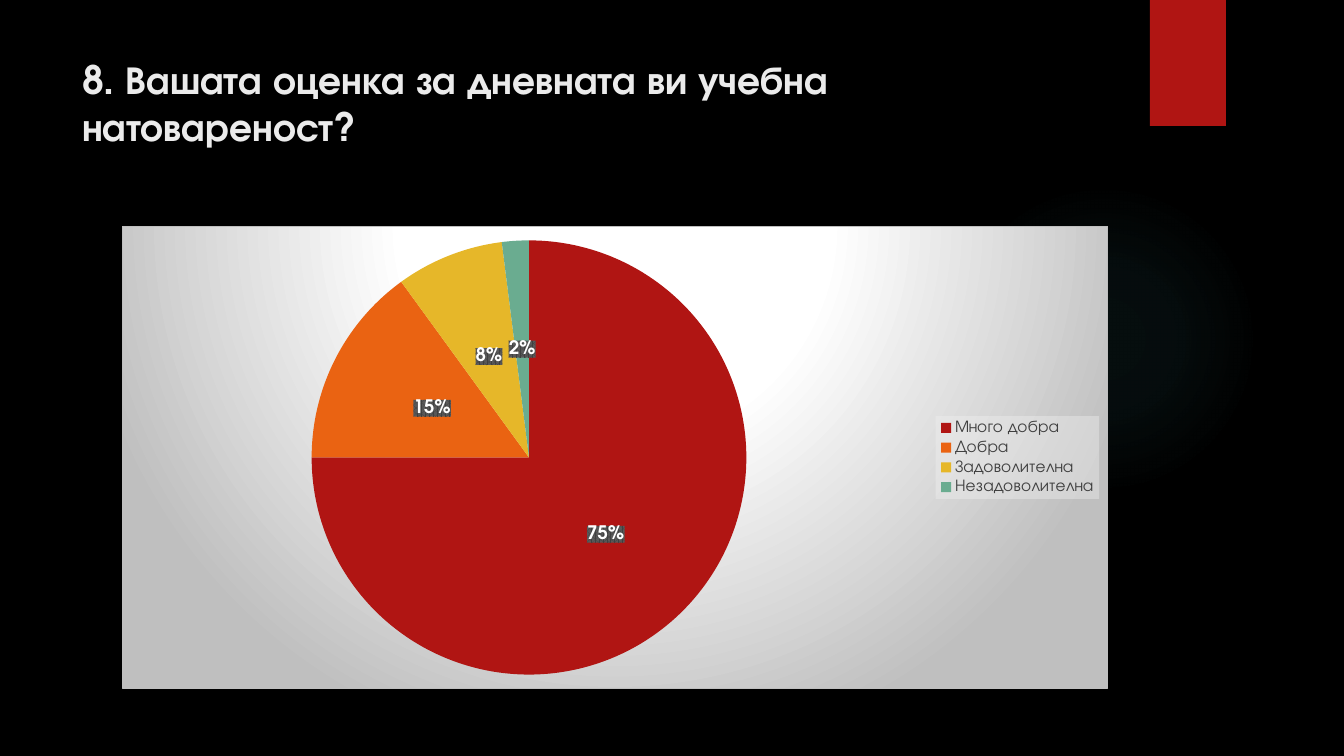
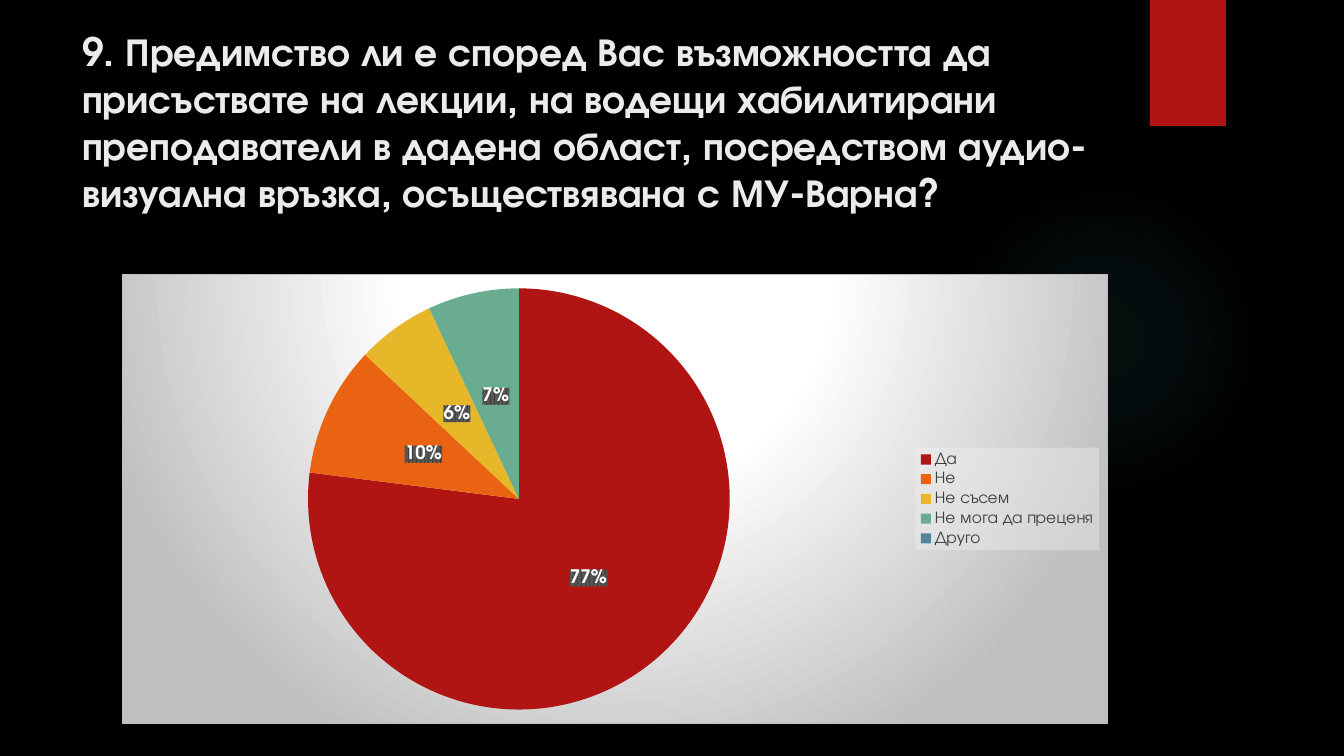
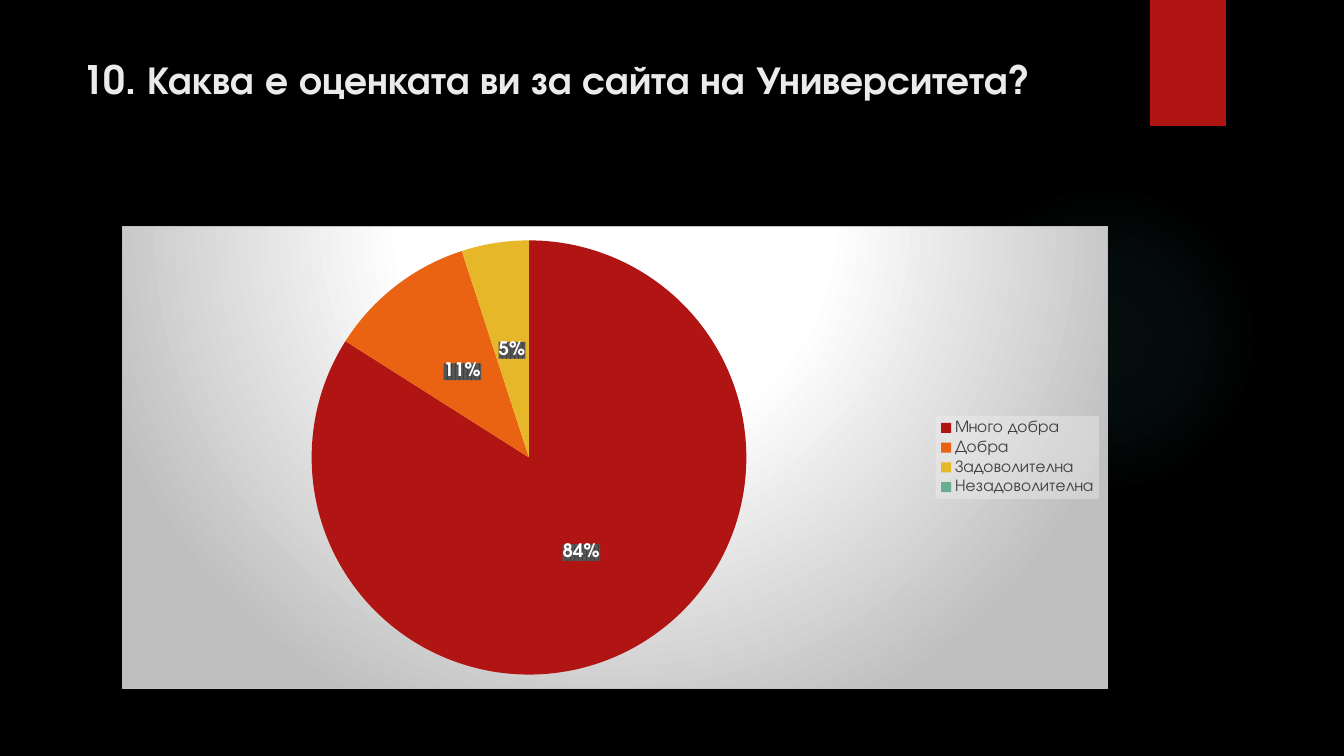
from pptx import Presentation
from pptx.chart.data import CategoryChartData
from pptx.dml.color import RGBColor
from pptx.enum.chart import XL_CHART_TYPE, XL_LABEL_POSITION, XL_LEGEND_POSITION
from pptx.enum.shapes import MSO_SHAPE
from pptx.enum.text import MSO_ANCHOR, MSO_AUTO_SIZE, PP_ALIGN
from pptx.oxml import parse_xml
from pptx.oxml.ns import nsdecls, qn
from pptx.util import Pt

PX = 914400 / 100.8
FONT = "TeX Gyre Adventor"
RED = "B01513"
SLICES = [RED, "EA6312", "E6B729", "6AAC90", "54849A"]
TITLE_FONT = {"size": 28, "color": "EBEBEB", "bold": True}
CHART_FONT = {"size": 10, "color": "FFFFFF"}
LEGEND_FONT = {"size": 12, "color": "404040"}
LABEL_FONT = {"size": 13.3, "color": "FFFFFF", "bold": True}
RATINGS = ["Много добра", "Добра", "Задоволителна", "Незадоволителна"]
QUESTIONS = [
    {"title": "8. Вашата оценка за дневната ви учебна натовареност?", "title_top": 50,
     "cats": RATINGS, "vals": [75, 15, 8, 2], "box": (122, 226, 986, 463)},
    {"title": "9. Предимство ли е според Вас възможността да присъствате на лекции, "
              "на водещи хабилитирани преподаватели в дадена област, посредством "
              "аудио-визуална връзка, осъществявана с МУ-Варна?", "title_top": 22,
     "cats": ["Да", "Не", "Не съсем", "Не мога да преценя", "Друго"],
     "vals": [77, 10, 6, 7, 0], "box": (122, 274, 986, 450)},
    {"title": "10. Каква е оценката ви за сайта на Университета?", "title_top": 50,
     "cats": RATINGS, "vals": [84, 11, 5, 0], "box": (122, 226, 986, 463)},
]


def px(*lengths):
    return [round(n * PX) for n in lengths]


def rgb(color):
    return RGBColor.from_string(color)


def set_font(font, size, color, bold=False):
    for name, value in {"name": FONT, "size": Pt(size), "bold": bold}.items():
        setattr(font, name, value)
    font.color.rgb = rgb(color)


def color_xml(color, alpha=100):
    return f'<a:srgbClr val="{color}"><a:alpha val="{alpha * 1000}"/></a:srgbClr>'


def gradient_xml(stops, rect):
    """Return a radial fill of (position, colour, alpha) stops around a focus rectangle."""
    gs = "".join(f'<a:gs pos="{pos * 1000}">{color_xml(color, alpha)}</a:gs>'
                 for pos, color, alpha in stops)
    sides = " ".join(f'{side}="{n * 1000}"' for side, n in zip("ltrb", rect))
    return (f'<a:gradFill {nsdecls("a")} rotWithShape="1"><a:gsLst>{gs}</a:gsLst>'
            f'<a:path path="circle"><a:fillToRect {sides}/></a:path></a:gradFill>')


def add_chart_fill(previous, fill, line="<a:ln><a:noFill/></a:ln>"):
    previous.addnext(parse_xml(f'<c:spPr {nsdecls("c", "a")}>{fill}{line}</c:spPr>'))


def add_plain_shape(slide, kind, box):
    sp = slide.shapes.add_shape(kind, *px(*box))
    sp.shadow.inherit = False
    sp.line.fill.background()
    return sp


def decorate_layout(layout, slide):
    """Build the glow and the red tab, and move them behind the layout's title."""
    glow = add_plain_shape(slide, MSO_SHAPE.OVAL, (949, 184, 310, 310))
    glow.fill.background()
    sp_pr = glow.element.spPr
    stops = [(0, "50B9C1", 7), (36, "50B9C1", 6), (69, "50B9C1", 0)]
    sp_pr.replace(sp_pr.find(qn("a:noFill")), parse_xml(gradient_xml(stops, [50] * 4)))

    tab = add_plain_shape(slide, MSO_SHAPE.RECTANGLE, (1150, 0, 76, 126))
    tab.fill.solid()
    tab.fill.fore_color.rgb = rgb(RED)
    tab.element.spPr.find(qn("a:effectLst")).append(parse_xml(
        f'<a:outerShdw {nsdecls("a")} blurRad="{Pt(3)}" dist="{Pt(2)}" dir="5400000">'
        f'{color_xml("000000", 45)}</a:outerShdw>'))

    for index, sp in enumerate((glow, tab), 2):
        layout.shapes.element.insert(index, sp.element)


def prepare_layout(prs):
    fill = prs.slide_master.background.fill
    fill.solid()
    fill.fore_color.rgb = rgb("000000")
    layout = prs.slide_layouts.get_by_name("Title Only")
    for ph in list(layout.placeholders)[1:]:
        ph.element.getparent().remove(ph.element)
    return layout


def set_title(slide, text, top):
    title = slide.shapes.title
    title.left, title.top, title.width, title.height = px(72, top, 1037, 154)
    tf = title.text_frame
    tf.text = text
    frame = {"word_wrap": True, "auto_size": MSO_AUTO_SIZE.NONE,
             "vertical_anchor": MSO_ANCHOR.TOP}
    for name, value in frame.items():
        setattr(tf, name, value)
    p = tf.paragraphs[0]
    p.alignment = PP_ALIGN.LEFT
    set_font(p.runs[0].font, **TITLE_FONT)


def add_labels(series, vals):
    labels = series.data_labels
    options = {"show_percentage": True, "show_value": False, "number_format": "0%",
               "number_format_is_linked": False, "position": XL_LABEL_POSITION.CENTER}
    for name, value in options.items():
        setattr(labels, name, value)
    set_font(labels.font, **LABEL_FONT)
    d_lbls = next(labels.font and series.data_labels for _ in [0])
    return d_lbls


def style_labels(chart, vals):
    """Put a dark pattern behind the labels and drop those of empty slices."""
    d_lbls = next(chart.element.iter(qn("c:dLbls")))
    add_chart_fill(d_lbls.find(qn("c:numFmt")),
                   f'<a:pattFill prst="pct75"><a:fgClr>{color_xml("404040")}</a:fgClr>'
                   f'<a:bgClr>{color_xml("595959")}</a:bgClr></a:pattFill>')
    empty = [i for i, val in enumerate(vals) if not val]
    for position, i in enumerate(empty):
        d_lbls.insert(position, parse_xml(
            f'<c:dLbl {nsdecls("c")}><c:idx val="{i}"/><c:delete val="1"/></c:dLbl>'))


def add_legend(chart):
    chart.has_legend = True
    legend = chart.legend
    legend.position = XL_LEGEND_POSITION.RIGHT
    legend.include_in_layout = False
    set_font(legend.font, **LEGEND_FONT)
    overlay = next(chart.element.iter(qn("c:legend"))).find(qn("c:overlay"))
    add_chart_fill(overlay, f'<a:solidFill>{color_xml("F2F2F2", 39)}</a:solidFill>')


def add_pie(slide, cats, vals, box):
    data = CategoryChartData()
    data.categories = cats
    data.add_series("Series 1", vals)
    chart = slide.shapes.add_chart(XL_CHART_TYPE.PIE, *px(*box), data).chart
    chart.has_title = False
    set_font(chart.font, **CHART_FONT)
    stops = [(0, "FFFFFF", 100), (39, "FFFFFF", 100), (100, "BFBFBF", 100)]
    add_chart_fill(chart.element.find(qn("c:chart")), gradient_xml(stops, (50, -80, 50, 180)),
                   f'<a:ln w="{Pt(0.75)}"><a:solidFill>{color_xml("BFBFBF")}</a:solidFill></a:ln>')
    plot = chart.plots[0]
    plot.vary_by_categories = True
    series = plot.series[0]
    for i, color in enumerate(SLICES[:len(vals)]):
        fill = series.points[i].format.fill
        fill.solid()
        fill.fore_color.rgb = rgb(color)
    add_labels(series, vals)
    style_labels(chart, vals)
    add_legend(chart)


def main():
    prs = Presentation()
    prs.slide_width, prs.slide_height = px(1344, 756)
    layout = prepare_layout(prs)
    for number, question in enumerate(QUESTIONS):
        slide = prs.slides.add_slide(layout)
        if number == 0:
            decorate_layout(layout, slide)
        set_title(slide, question["title"], question["title_top"])
        add_pie(slide, question["cats"], question["vals"], question["box"])
    prs.save("out.pptx")


if __name__ == "__main__":
    main()
